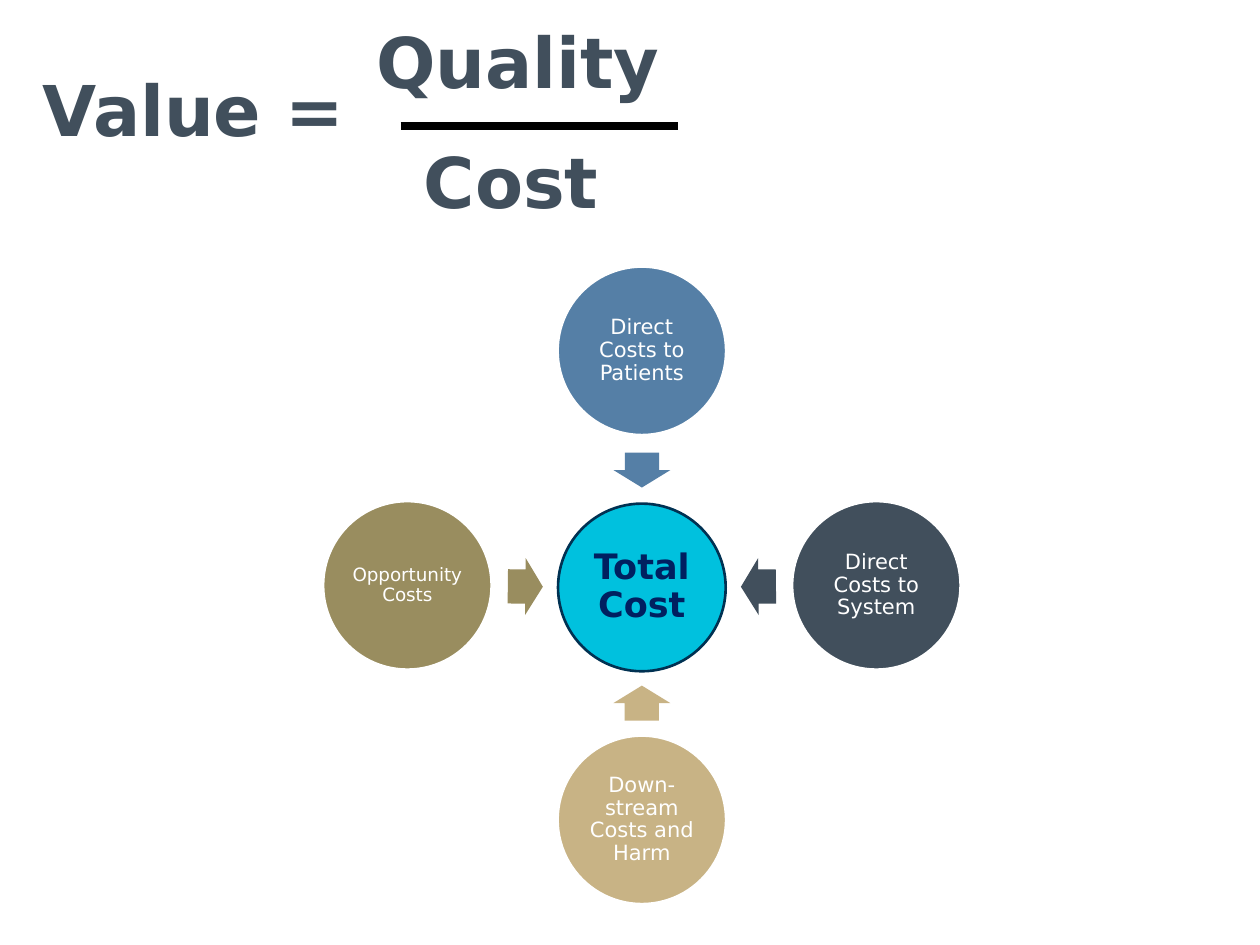
"""Build the value equation slide with its total cost diagram."""
from dataclasses import dataclass

from lxml import etree
from pptx import Presentation
from pptx.dml.color import RGBColor
from pptx.enum import shapes, text
from pptx.oxml import ns
from pptx.util import Pt

FONT = "DejaVu Sans"
SLATE, WHITE = "414F5C", "FFFFFF"
CENTER_X, CENTER_Y = 366.8, 334.5
DIAMETER = 95.8
ORBIT, ARROW_ORBIT = 134, 66.6
ARROW_LENGTH, ARROW_HEIGHT = 20, 32.6


@dataclass
class Cost:
    label: str
    color: str
    step_x: int
    step_y: int
    rotation: float
    size: float = 12


COSTS = [
    Cost("Direct Costs to Patients", "557FA6", 0, -1, 90),
    Cost("Direct Costs to System", SLATE, 1, 0, 179.4),
    Cost("Down-stream Costs and Harm", "C8B385", 0, 1, 270),
    Cost("Opportunity Costs", "998D5F", -1, 0, 0.6, 10.5),
]


def rgb(value: str) -> RGBColor:
    return RGBColor.from_string(value)


def write(paragraph, words: str, size: float, color: str, bold: bool) -> None:
    run = paragraph.add_run()
    run.text = words
    run.font.name = FONT
    run.font.size = Pt(size)
    run.font.bold = bold
    run.font.color.rgb = rgb(color)


def write_term(shape, words: str, alignment) -> None:
    frame = shape.text_frame
    frame.word_wrap = True
    frame.auto_size = text.MSO_AUTO_SIZE.NONE
    frame.vertical_anchor = text.MSO_ANCHOR.TOP
    paragraph = frame.paragraphs[0]
    paragraph.alignment = alignment
    write(paragraph, words, 40, SLATE, True)


def add_term(slide, words: str, left: float, top: float, width: float) -> None:
    box = slide.shapes.add_textbox(Pt(left), Pt(top), Pt(width), Pt(55.4))
    write_term(box, words, text.PP_ALIGN.CENTER)


def add_centered(slide, kind, x: float, y: float, width: float, height: float, color: str):
    shape = slide.shapes.add_shape(
        kind, Pt(x - width / 2), Pt(y - height / 2), Pt(width), Pt(height))
    shape.shadow.inherit = False
    shape.fill.solid()
    shape.fill.fore_color.rgb = rgb(color)
    shape.line.fill.background()
    return shape


def add_circle(slide, label: str, x: float, y: float, fill: str, line: str,
               line_width: float, size: float, color: str, bold: bool = False) -> None:
    circle = add_centered(slide, shapes.MSO_SHAPE.OVAL, x, y, DIAMETER, DIAMETER, fill)
    circle.line.color.rgb = rgb(line)
    circle.line.width = Pt(line_width)
    frame = circle.text_frame
    frame.word_wrap = True
    frame.vertical_anchor = text.MSO_ANCHOR.MIDDLE
    frame.margin_left = frame.margin_right = Pt(1.5)
    frame.margin_top = frame.margin_bottom = Pt(1.5)
    paragraph = frame.paragraphs[0]
    paragraph.alignment = text.PP_ALIGN.CENTER
    paragraph.line_spacing = 0.9
    write(paragraph, label, size, color, bold)


def add_cost(slide, cost: Cost) -> None:
    arrow = add_centered(
        slide, shapes.MSO_SHAPE.RIGHT_ARROW,
        CENTER_X + cost.step_x * ARROW_ORBIT, CENTER_Y + 0.7 + cost.step_y * ARROW_ORBIT,
        ARROW_LENGTH, ARROW_HEIGHT, cost.color)
    arrow.adjustments[0] = 0.6
    arrow.adjustments[1] = 0.5
    arrow.rotation = cost.rotation
    add_circle(slide, cost.label, CENTER_X + cost.step_x * ORBIT,
               CENTER_Y + cost.step_y * ORBIT, cost.color, WHITE, 1, cost.size, WHITE)


def add_fraction_bar(slide) -> None:
    bar = slide.shapes.add_connector(
        shapes.MSO_CONNECTOR.STRAIGHT, Pt(229), Pt(72), Pt(387.4), Pt(72))
    bar.line.color.rgb = rgb("000000")
    bar.line.width = Pt(4.5)
    properties = bar.element.find(ns.qn("p:spPr"))
    etree.SubElement(properties, ns.qn("a:effectLst"))


def main() -> None:
    presentation = Presentation()
    presentation.slide_width, presentation.slide_height = Pt(720), Pt(540)
    slide = presentation.slides.add_slide(presentation.slide_layouts[5])
    title = slide.shapes.title
    title.left, title.top, title.width, title.height = Pt(17.3), Pt(34.6), Pt(272), Pt(55.4)
    write_term(title, "Value =", text.PP_ALIGN.LEFT)
    add_term(slide, "Quality", 194.4, 7.2, 203)
    add_term(slide, "Cost", 222.5, 75.6, 139)
    add_fraction_bar(slide)
    add_circle(slide, "Total Cost", CENTER_X, CENTER_Y + 1.2,
               "00C1DE", "003152", 1.5, 20, "002060", True)
    for cost in COSTS:
        add_cost(slide, cost)
    presentation.save("out.pptx")


if __name__ == "__main__":
    main()
